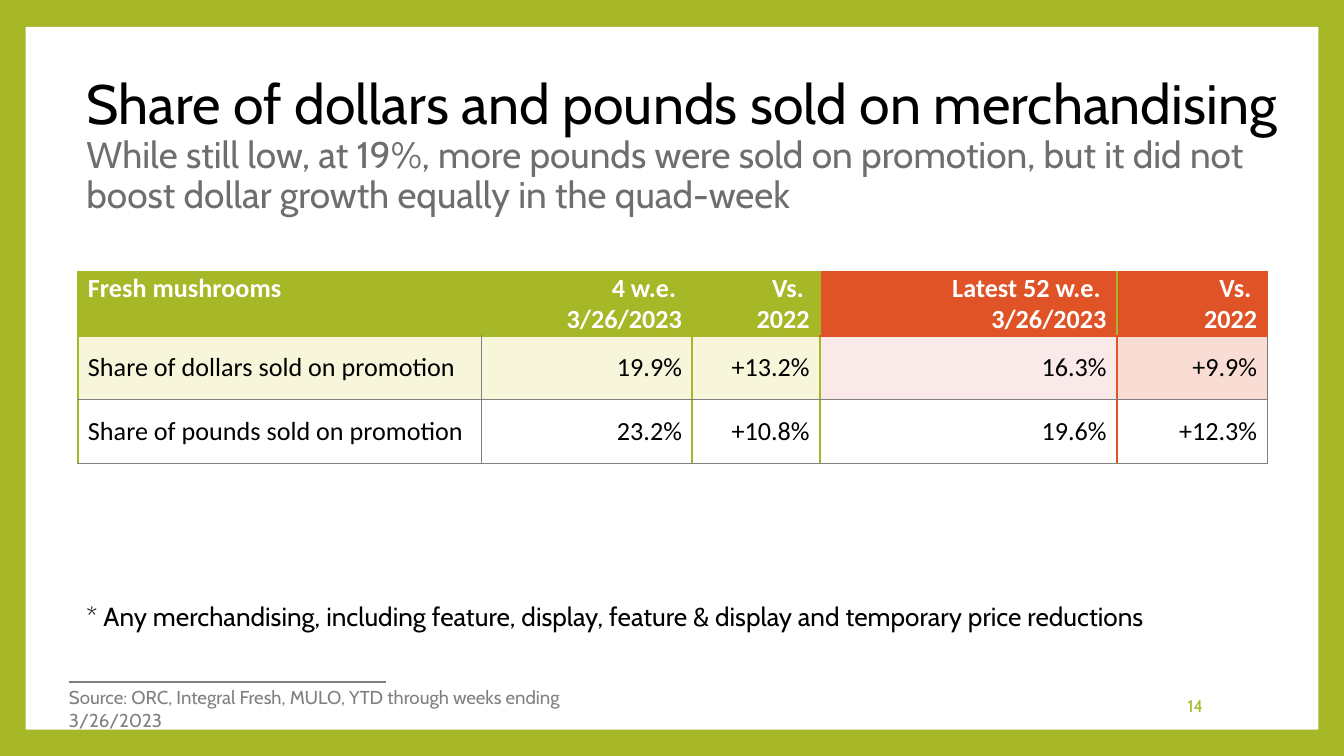
"""Build the slide on the share of mushroom sales made on promotion."""
from dataclasses import dataclass
from typing import Any

from lxml.etree import SubElement
from pptx import Presentation
from pptx.dml.color import RGBColor
from pptx.enum.shapes import MSO_CONNECTOR, MSO_SHAPE
from pptx.enum.text import MSO_ANCHOR, PP_ALIGN
from pptx.oxml.ns import qn
from pptx.util import Emu, Pt

EMU_PER_PX = 4572
COLORS = {
    "green": "A6B727", "orange": "DF5327", "white": "FFFFFF", "black": "000000",
    "gray": "808080", "subtitle": "6E6E6E", "cream": "F7F6DA",
    "blush": "F9E9E8", "peach": "F9DDD4",
}
CELL_FORMAT = {"margin_left": Emu(15 * EMU_PER_PX), "margin_right": Emu(15 * EMU_PER_PX),
               "margin_top": 0, "margin_bottom": 0}
TABLE_FORMAT = {"first_row": False, "horz_banding": False}


@dataclass(frozen=True)
class Run:
    """A line of text with its size and colour."""
    text: str
    size: float
    color: str


@dataclass(frozen=True)
class TextBlock:
    """A text box with one paragraph of one or more lines."""
    box: tuple[int, int, int, int]
    runs: tuple[Run, ...]
    anchor: MSO_ANCHOR = MSO_ANCHOR.TOP
    align: PP_ALIGN = PP_ALIGN.LEFT
    spacing: float = 1.0


@dataclass(frozen=True)
class Row:
    """A table row with its texts, fills and border colours."""
    height: int
    texts: tuple[str, ...]
    fills: tuple[str, ...]
    edges: tuple[str, ...]
    bottoms: tuple[str, ...]
    color: str
    bold: bool
    anchor: MSO_ANCHOR


HEADER_FILLS = ("green",) * 3 + ("orange",) * 2
BODY = {"height": 95, "edges": ("green", "gray", "green", "green", "orange", "gray"),
        "bottoms": ("gray",) * 5, "color": "black", "bold": False,
        "anchor": MSO_ANCHOR.MIDDLE}
COLUMNS = (600, 314, 190, 442, 224)
ROWS = (
    Row(95, ("Fresh mushrooms", "4 w.e. \n3/26/2023", "Vs. \n2022",
             " Latest 52 w.e. \n3/26/2023", "Vs. \n2022"),
        HEADER_FILLS, ("green",) * 5 + ("orange",), HEADER_FILLS,
        "white", True, MSO_ANCHOR.TOP),
    Row(texts=("Share of dollars sold on promotion", "19.9%", "+13.2%", "16.3%", "+9.9%"),
        fills=("cream",) * 3 + ("blush", "peach"), **BODY),
    Row(texts=("Share of pounds sold on promotion", "23.2%", "+10.8%", "19.6%", "+12.3%"),
        fills=("white",) * 5, **BODY),
)
TEXTS = (
    TextBlock((109, 109, 1858, 218), (
        Run("Share of dollars and pounds sold on merchandising", 29.7, "black"),
        Run("While still low, at 19%, more pounds were sold on promotion, but it did not "
            "boost dollar growth equally in the quad-week", 19.8, "subtitle"),
    ), MSO_ANCHOR.MIDDLE, spacing=0.9),
    TextBlock((1530, 1021, 280, 60), (Run("14", 9, "green"),),
              MSO_ANCHOR.MIDDLE, PP_ALIGN.RIGHT),
    TextBlock((83, 1011, 900, 54), (
        Run("Source: ORC, Integral Fresh, MULO, YTD through weeks ending 3/26/2023",
            10, "gray"),)),
    TextBlock((109, 884, 1620, 68), (
        Run("* Any merchandising, including feature, display, feature & display "
            "and temporary price reductions", 14, "black"),)),
)


def px(value: int) -> Emu:
    """Turn px into EMU."""
    return Emu(value * EMU_PER_PX)


def rgb(name: str) -> RGBColor:
    """Look up a named colour."""
    return RGBColor.from_string(COLORS[name])


def apply(target: Any, values: dict[str, Any]) -> None:
    """Set each format value on the target."""
    for name, value in values.items():
        setattr(target, name, value)


def add_run(p: Any, run: Run, font: str, bold: bool = False) -> None:
    """Append a formatted run to a paragraph."""
    r = p.add_run()
    r.text = run.text
    apply(r.font, {"name": font, "size": Pt(run.size), "bold": bold})
    r.font.color.rgb = rgb(run.color)


def add_text(s: Any, block: TextBlock) -> None:
    """Draw a text block."""
    tf = s.shapes.add_textbox(*map(px, block.box)).text_frame
    apply(tf, {"word_wrap": True, "vertical_anchor": block.anchor})
    p = tf.paragraphs[0]
    apply(p, {"alignment": block.align, "line_spacing": block.spacing})
    for i, run in enumerate(block.runs):
        if i:
            p.add_line_break()
        add_run(p, run, "Cabin")


def add_border(cell: Any, side: str, color: str) -> None:
    """Draw one border of a table cell."""
    width = Pt(0.5) if color == "gray" else Pt(1)
    ln = SubElement(cell._tc.get_or_add_tcPr(), qn(f"a:ln{side}"), w=str(width))
    fill = SubElement(ln, qn("a:solidFill"))
    SubElement(fill, qn("a:srgbClr"), val=COLORS[color])


def fill_cell(cell: Any, row: Row, col: int, top: str) -> None:
    """Write and format one table cell."""
    borders = {"L": row.edges[col], "R": row.edges[col + 1],
               "T": top, "B": row.bottoms[col]}
    for side, color in borders.items():
        add_border(cell, side, color)
    cell.fill.solid()
    cell.fill.fore_color.rgb = rgb(row.fills[col])
    apply(cell, CELL_FORMAT | {"vertical_anchor": row.anchor})
    tf = cell.text_frame
    for i, line in enumerate(row.texts[col].split("\n")):
        p = tf.add_paragraph() if i else tf.paragraphs[0]
        p.alignment = PP_ALIGN.RIGHT if col else PP_ALIGN.LEFT
        add_run(p, Run(line, 14, row.color), "Calibri", row.bold)


def add_share_table(s: Any) -> None:
    """Draw the table of promotion shares."""
    height = sum(row.height for row in ROWS)
    table = s.shapes.add_table(len(ROWS), len(COLUMNS), px(116), px(405),
                               px(sum(COLUMNS)), px(height)).table
    apply(table, TABLE_FORMAT)
    for column, width in zip(table.columns, COLUMNS):
        column.width = px(width)
    tops = HEADER_FILLS
    for i, row in enumerate(ROWS):
        table.rows[i].height = px(row.height)
        for col in range(len(COLUMNS)):
            fill_cell(table.cell(i, col), row, col, tops[col])
        tops = row.bottoms


def add_frame(s: Any) -> None:
    """Draw the green frame, white panel and source rule."""
    s.background.fill.solid()
    s.background.fill.fore_color.rgb = rgb("green")
    sp = s.shapes.add_shape(MSO_SHAPE.RECTANGLE, *map(px, (38, 40, 1924, 1046)))
    sp.shadow.inherit = False
    sp.fill.solid()
    sp.fill.fore_color.rgb = rgb("white")
    sp.line.fill.background()
    rule = s.shapes.add_connector(MSO_CONNECTOR.STRAIGHT,
                                  *map(px, (102, 1015, 574, 1015)))
    rule.line.color.rgb = rgb("gray")
    rule.line.width = Pt(0.79)
    SubElement(rule._element.spPr, qn("a:effectLst"))


def main() -> None:
    """Build and save the slide."""
    prs = Presentation()
    apply(prs, {"slide_width": px(2000), "slide_height": px(1125)})
    s = prs.slides.add_slide(prs.slide_layouts[6])
    add_frame(s)
    for block in TEXTS:
        add_text(s, block)
    add_share_table(s)
    prs.save("out.pptx")


if __name__ == "__main__":
    main()
